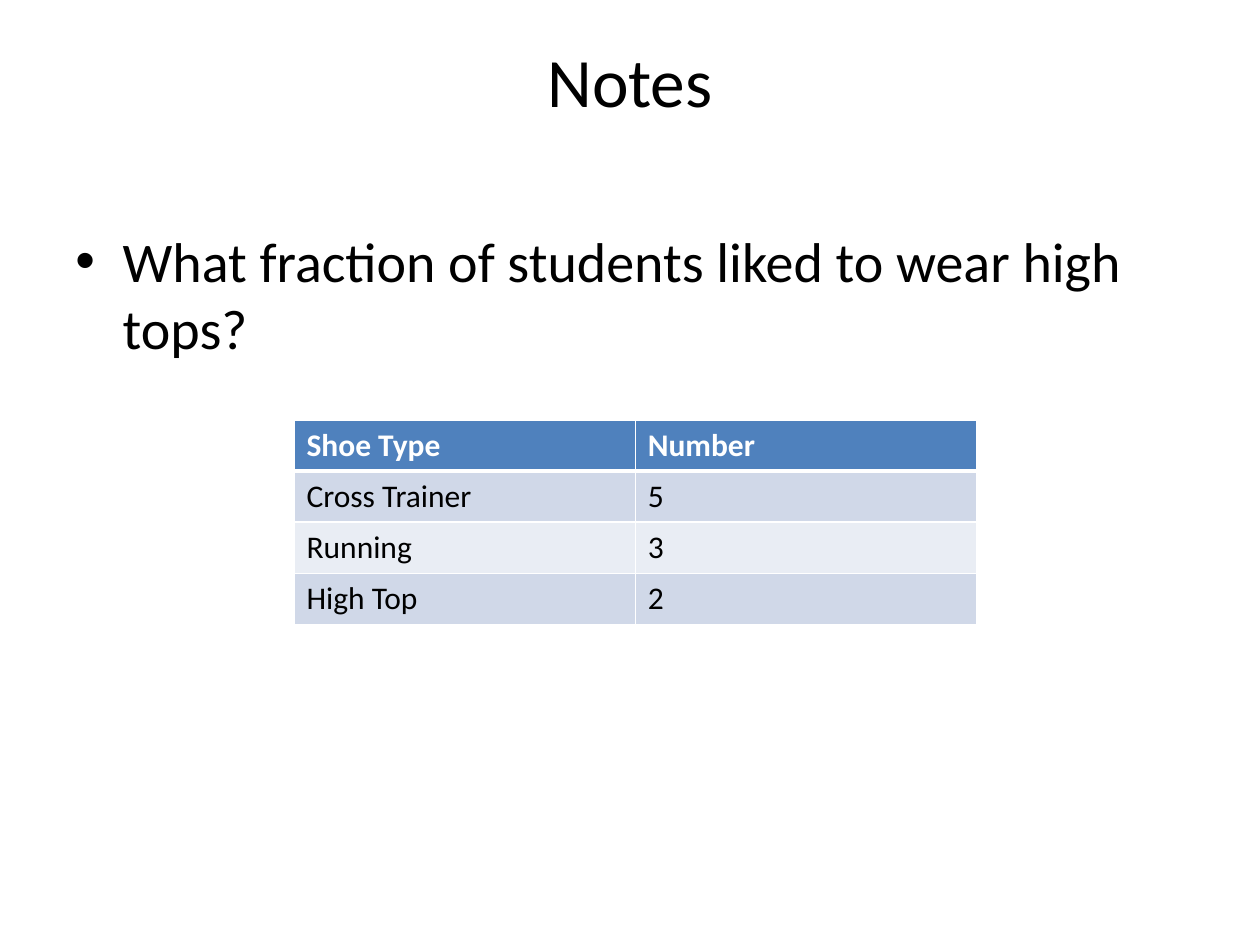
"""Builds a slide with a question about a table of shoe types."""
from dataclasses import dataclass

from lxml.etree import SubElement
from pptx import Presentation
from pptx.dml.color import RGBColor
from pptx.enum.text import PP_ALIGN
from pptx.oxml.ns import qn
from pptx.util import Pt

COLORS = {
    "text": "000000",
    "white": "FFFFFF",
    "header": "4F81BD",
    "odd": "D0D8E8",
    "even": "E9EDF4",
}
FONT = "Calibri"


@dataclass
class Row:
    shoe: str
    number: str
    fill: str
    color: str = "text"
    bold: bool = False
    top: float = 1
    bottom: float = 1


ROWS = [
    Row("Shoe Type", "Number", "header", "white", True, bottom=3),
    Row("Cross Trainer", "5", "odd", top=3),
    Row("Running", "3", "even"),
    Row("High Top", "2", "odd"),
]


def write(tf, text: str, *, size: float, color="text", bold=False, align=PP_ALIGN.LEFT):
    p = tf.paragraphs[0]
    p.alignment = align
    r = p.add_run()
    r.text = text
    r.font.name = FONT
    r.font.size = Pt(size)
    r.font.bold = bold
    r.font.color.rgb = RGBColor.from_string(COLORS[color])
    return p


def add_box(s, left: float, top: float, width: float, height: float):
    tf = s.shapes.add_textbox(Pt(left), Pt(top), Pt(width), Pt(height)).text_frame
    tf.word_wrap = True
    return tf


def add_bullet(p, indent: float) -> None:
    pPr = p._p.get_or_add_pPr()
    pPr.set("marL", str(Pt(indent)))
    pPr.set("indent", str(-Pt(indent)))
    before = SubElement(pPr, qn("a:spcBef"))
    SubElement(before, qn("a:spcPct"), val="20000")
    SubElement(pPr, qn("a:buFont"), typeface="Arial")
    SubElement(pPr, qn("a:buChar"), char="•")


def add_borders(cell, top: float, bottom: float) -> None:
    tcPr = cell._tc.get_or_add_tcPr()
    for side, width in {"L": 1, "R": 1, "T": top, "B": bottom}.items():
        ln = SubElement(tcPr, qn(f"a:ln{side}"), w=str(Pt(width)))
        fill = SubElement(ln, qn("a:solidFill"))
        SubElement(fill, qn("a:srgbClr"), val=COLORS["white"])


def add_shoe_table(s, left: float, top: float, col_width: float, row_height: float) -> None:
    width, height = 2 * col_width, len(ROWS) * row_height
    table = s.shapes.add_table(len(ROWS), 2, Pt(left), Pt(top), Pt(width), Pt(height)).table
    for i, row in enumerate(ROWS):
        for j, text in enumerate((row.shoe, row.number)):
            cell = table.cell(i, j)
            add_borders(cell, row.top, row.bottom)
            cell.fill.solid()
            cell.fill.fore_color.rgb = RGBColor.from_string(COLORS[row.fill])
            write(cell.text_frame, text, size=18, color=row.color, bold=row.bold)


def main() -> None:
    prs = Presentation()
    prs.slide_width, prs.slide_height = Pt(720), Pt(540)
    s = prs.slides.add_slide(prs.slide_layouts[6])

    title = add_box(s, 36, 21.6, 648, 90)
    title.margin_top = Pt(0)
    write(title, "Notes", size=39.6, align=PP_ALIGN.CENTER)

    body = add_box(s, 36, 126, 648, 356.4)
    p = write(body, "What fraction of students liked to wear high tops?", size=32)
    add_bullet(p, 27)

    add_shoe_table(s, 168, 240, 195, 29.2)
    prs.save("out.pptx")


if __name__ == "__main__":
    main()
